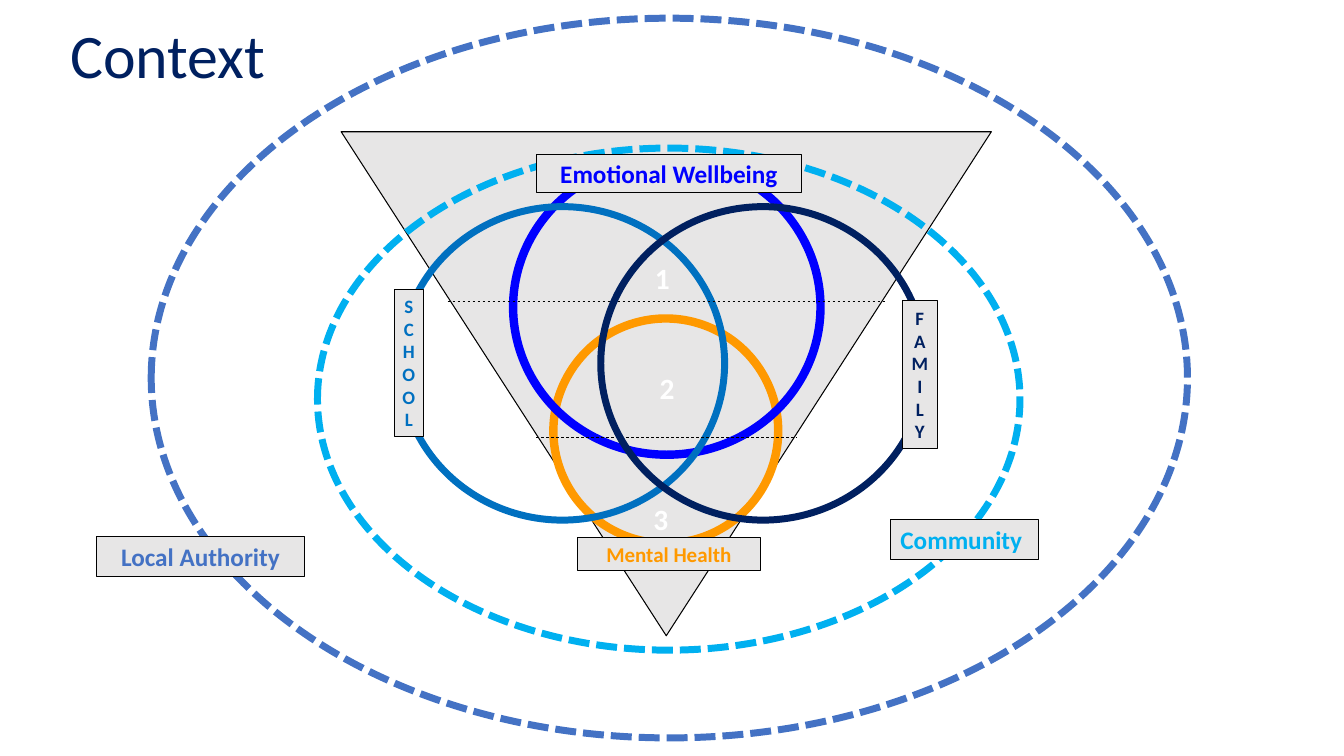
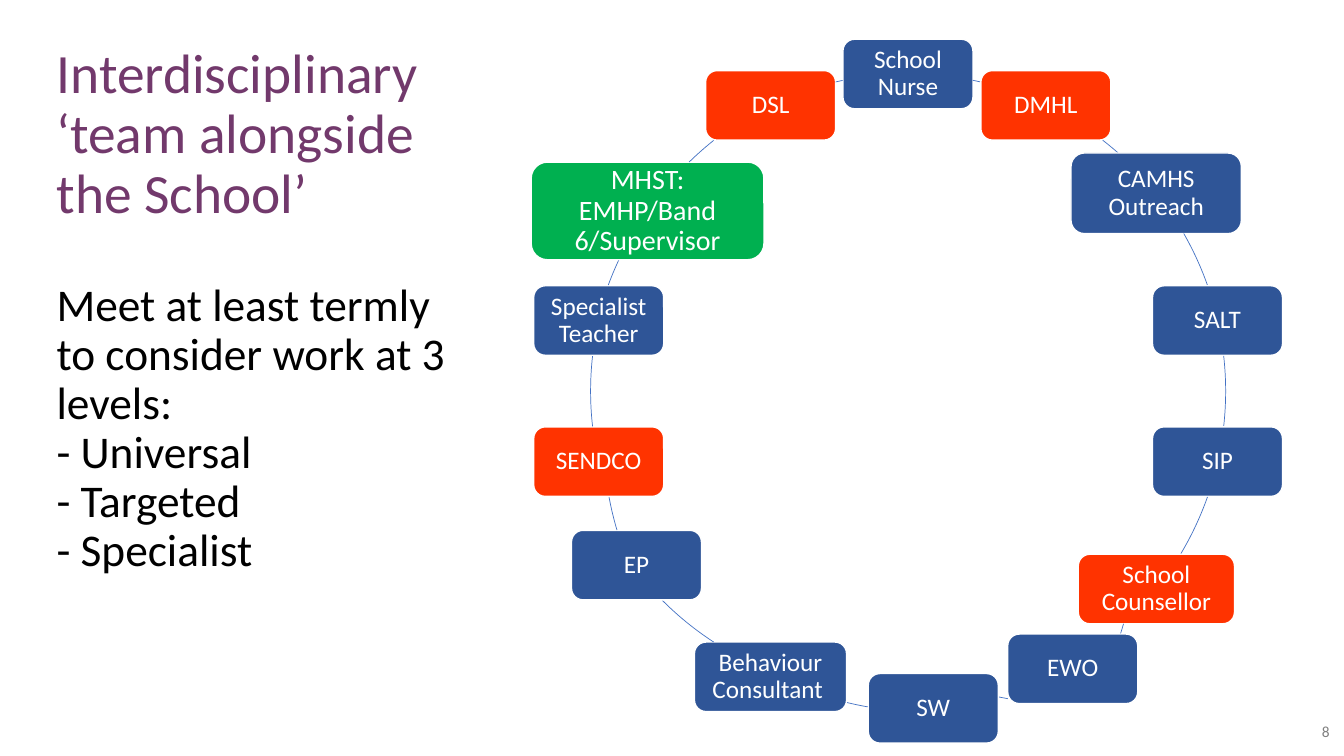
from dataclasses import dataclass
from math import atan2, degrees
from typing import Optional

from lxml.etree import SubElement
from pptx import Presentation
from pptx.dml.color import RGBColor
from pptx.enum.dml import MSO_LINE
from pptx.enum.shapes import MSO_CONNECTOR, MSO_SHAPE
from pptx.enum.text import MSO_ANCHOR, MSO_AUTO_SIZE, PP_ALIGN
from pptx.oxml.ns import qn
from pptx.util import Pt


@dataclass(frozen=True)
class Theme:
    """Colours, type sizes and font shared by the slides."""
    font: str = "Calibri"
    black: str = "000000"
    white: str = "FFFFFF"
    panel: str = "E7E6E6"
    navy: str = "002060"
    school: str = "0070C0"
    wellbeing: str = "0000FF"
    health: str = "FF9900"
    community: str = "00B0F0"
    accent: str = "4472C4"
    purple: str = "72396C"
    grey: str = "808080"
    partner: str = "2F5597"
    staff: str = "FF3300"
    support: str = "00B050"
    context_title: float = 44.2
    team_title: float = 39.6
    body: float = 32.4
    number: float = 21
    team: float = 20
    label: float = 18
    small_label: float = 15
    letter: float = 13.5
    footer: float = 11


THEME = Theme()
CIRCLE_SIZE = 453.6
DEGREE_ADJUSTMENT = 0.6


@dataclass(frozen=True)
class Frame:
    """Position and size in points."""
    left: float
    top: float
    width: float
    height: float

    def lengths(self) -> tuple:
        """Return the four lengths for a shape call."""
        return Pt(self.left), Pt(self.top), Pt(self.width), Pt(self.height)


@dataclass(frozen=True)
class TextStyle:
    """Look of a piece of text."""
    size: float
    color: str
    bold: bool = False
    align: PP_ALIGN = PP_ALIGN.CENTER
    anchor: MSO_ANCHOR = MSO_ANCHOR.MIDDLE
    spacing: float = 1.0
    side_inset: float = 7.2
    edge_inset: float = 3.6


@dataclass(frozen=True)
class Ring:
    """Outlined ellipse of the context diagram."""
    frame: Frame
    color: str
    weight: float = 5
    dash: Optional[MSO_LINE] = None


@dataclass(frozen=True)
class Label:
    """Grey box naming a ring."""
    text: str
    frame: Frame
    color: str
    size: float = THEME.label
    align: PP_ALIGN = PP_ALIGN.CENTER
    side_inset: float = 7.2


@dataclass(frozen=True)
class Member:
    """Team box and the arc that leads to the next one."""
    text: str
    left: float
    top: float
    arc_start: tuple
    arc_end: tuple
    fill: str = THEME.partner
    width: float = 92.9
    height: float = 49.7
    size: float = THEME.label
    circle: tuple = (421.9, 52.6)


INNER_RINGS = (
    Ring(Frame(395.3, 227.5, 160.6, 160.6), THEME.health, 6),
    Ring(Frame(366.5, 113.8, 219.6, 211), THEME.wellbeing, 6),
    Ring(Frame(285.8, 147.6, 231.8, 223.9), THEME.school),
)
OUTER_RINGS = (
    Ring(Frame(429.1, 147.6, 231.8, 223.9), THEME.navy),
    Ring(Frame(226.8, 105.8, 501.8, 358.6), THEME.community, dash=MSO_LINE.SQUARE_DOT),
    Ring(Frame(108, 13, 740.2, 514.1), THEME.accent, dash=MSO_LINE.SQUARE_DOT),
)
LEVEL_LINES = ((383, 568.8, 312.5), (319.7, 632.2, 215.3))
LABELS = (
    Label("\n".join("SCHOOL"), Frame(281.5, 206.6, 20.9, 105.1), THEME.school,
          THEME.letter, side_inset=0),
    Label("\n".join("FAMILY"), Frame(644.4, 214.9, 25.2, 105.5), THEME.navy,
          THEME.letter, side_inset=0),
    Label("Community", Frame(636.1, 371.1, 105.8, 28.8), THEME.community,
          align=PP_ALIGN.LEFT),
    Label("Emotional Wellbeing", Frame(383, 110.2, 189.6, 27.4), THEME.wellbeing),
    Label("Mental Health", Frame(412.4, 383.8, 130.8, 23.8), THEME.health,
          THEME.small_label),
    Label("Local Authority", Frame(69.1, 383, 148.3, 29), THEME.accent),
)
LEVEL_CENTRES = ((473, 198.7), (476.5, 277.2), (472.1, 370.4))
MEMBERS = (
    Member("School Nurse", 602.1, 28, (694.8, 57.6), (700.6, 58.3)),
    Member("DMHL", 700.6, 50.4, (787.7, 100.1), (798.5, 109.4), THEME.staff),
    Member("CAMHS Outreach", 765, 109.3, (845.3, 167), (862.6, 203.8),
           width=121.7, height=57.6),
    Member("SALT", 823.2, 204.1, (874.1, 254.2), (874.1, 304.6)),
    Member("SIP", 823.2, 304.9, (862.6, 355), (843.1, 395.3)),
    Member("School Counsellor", 770.2, 395.9, (802.8, 445.7), (800.6, 452.9),
           THEME.staff, 111.6, circle=(357.8, 156.2)),
    Member("EWO", 719.8, 452.9, (720, 499), (712.8, 497.5), circle=(532.8, 49)),
    Member("SW", 620.2, 481.1, (619.9, 504.7), (604.8, 501.8), circle=(432, 54.7)),
    Member("Behaviour Consultant ", 496, 458.6, (509.8, 458.6), (473, 429.1),
           width=108.7, circle=(406.8, 41.8)),
    Member("EP", 408.2, 378.8, (440.6, 378.7), (434.9, 355), circle=(431.3, 87.1)),
    Member("SENDCO", 381.2, 304.9, (423.4, 304.6), (423.4, 254.2), THEME.staff),
    Member("Specialist Teacher", 381.2, 204.1, (434.9, 203.8), (442.8, 185.8),
           circle=(420.5, 55.4)),
    Member("MHST: EMHP/Band 6/Supervisor", 379.4, 115.8, (492.5, 115.9), (509.8, 100.1),
           THEME.support, 166.3, 69.8, THEME.team, (424.1, 51.1)),
    Member("DSL", 504, 50.4, (596.9, 58.3), (601.9, 57.6), THEME.staff),
)


def rgb(color: str) -> RGBColor:
    """Turn a hex string into a colour."""
    return RGBColor.from_string(color)


def format_para(para, style: TextStyle) -> None:
    """Format a paragraph and its runs."""
    para.alignment = style.align
    para.line_spacing = style.spacing
    for span in para.runs:
        span.font.name = THEME.font
        span.font.size = Pt(style.size)
        span.font.bold = style.bold
        span.font.color.rgb = rgb(style.color)


def write_text(box, text: str, style: TextStyle) -> None:
    """Fill a shape with text, one paragraph per line."""
    text_frame = box.text_frame
    text_frame.text = text
    text_frame.word_wrap = True
    text_frame.auto_size = MSO_AUTO_SIZE.NONE
    text_frame.vertical_anchor = style.anchor
    text_frame.margin_left = text_frame.margin_right = Pt(style.side_inset)
    text_frame.margin_top = text_frame.margin_bottom = Pt(style.edge_inset)
    for para in text_frame.paragraphs:
        format_para(para, style)


def add_text(page, frame: Frame, text: str, style: TextStyle) -> None:
    """Add a text box."""
    write_text(page.shapes.add_textbox(*frame.lengths()), text, style)


def set_title(page, frame: Frame, text: str, style: TextStyle) -> None:
    """Move, fill and format the title placeholder."""
    title = page.shapes.title
    title.left, title.top, title.width, title.height = frame.lengths()
    write_text(title, text, style)


def add_outlined(page, kind: MSO_SHAPE, frame: Frame, fill: Optional[str],
                 line: str, weight: float):
    """Add a preset shape with an outline and an optional fill."""
    shape = page.shapes.add_shape(kind, *frame.lengths())
    shape.shadow.inherit = False
    if fill is None:
        shape.fill.background()
    else:
        shape.fill.solid()
        shape.fill.fore_color.rgb = rgb(fill)
    shape.line.color.rgb = rgb(line)
    shape.line.width = Pt(weight)
    return shape


def add_ring(page, ring: Ring) -> None:
    """Draw one ellipse of the diagram."""
    shape = add_outlined(page, MSO_SHAPE.OVAL, ring.frame, None, ring.color, ring.weight)
    if ring.dash is not None:
        shape.line.dash_style = ring.dash


def add_level_line(page, left: float, right: float, height: float) -> None:
    """Draw a dashed line between two levels."""
    line = page.shapes.add_connector(
        MSO_CONNECTOR.STRAIGHT, Pt(left), Pt(height), Pt(right), Pt(height))
    line.line.color.rgb = rgb(THEME.black)
    line.line.width = Pt(0.5)
    line.line.dash_style = MSO_LINE.DASH
    SubElement(line._element.spPr, qn("a:effectLst"))


def add_label(page, label: Label) -> None:
    """Draw a grey name box."""
    box = add_outlined(page, MSO_SHAPE.RECTANGLE, label.frame, THEME.panel,
                       THEME.black, 0.75)
    write_text(box, label.text, TextStyle(label.size, label.color, True, label.align,
                                          side_inset=label.side_inset))


def add_member(page, member: Member) -> None:
    """Draw a team box and its arc."""
    frame = Frame(member.left, member.top, member.width, member.height)
    box = add_outlined(page, MSO_SHAPE.ROUNDED_RECTANGLE, frame, member.fill,
                       THEME.white, 1)
    write_text(box, member.text, TextStyle(member.size, THEME.white, spacing=0.9,
                                           side_inset=7.6, edge_inset=0))
    left, top = member.circle
    arc = add_outlined(page, MSO_SHAPE.ARC, Frame(left, top, CIRCLE_SIZE, CIRCLE_SIZE),
                       None, THEME.accent, 0.5)
    for index, (x, y) in enumerate((member.arc_start, member.arc_end)):
        angle = degrees(atan2(y - top - CIRCLE_SIZE / 2, x - left - CIRCLE_SIZE / 2))
        arc.adjustments[index] = angle % 360 * DEGREE_ADJUSTMENT


def build_context(page) -> None:
    """Build the slide of nested contexts."""
    set_title(page, Frame(0, 8.5, 240, 65), "Context",
              TextStyle(THEME.context_title, THEME.navy, anchor=MSO_ANCHOR.TOP))
    triangle = add_outlined(page, MSO_SHAPE.ISOSCELES_TRIANGLE,
                            Frame(243.7, 94.1, 464.4, 360), THEME.panel, THEME.black, 0.75)
    triangle.rotation = 180
    for ring in INNER_RINGS:
        add_ring(page, ring)
    for level_line in LEVEL_LINES:
        add_level_line(page, *level_line)
    for ring in OUTER_RINGS:
        add_ring(page, ring)
    for label in LABELS:
        add_label(page, label)
    for level, (centre_x, centre_y) in enumerate(LEVEL_CENTRES, start=1):
        add_text(page, Frame(centre_x - 139.7, centre_y - 16.2, 279.4, 32.4), str(level),
                 TextStyle(THEME.number, THEME.white, True))


def build_team(page) -> None:
    """Build the slide of the team around the school."""
    heading = TextStyle(THEME.team_title, THEME.purple, align=PP_ALIGN.LEFT,
                        anchor=MSO_ANCHOR.TOP, spacing=0.9)
    body = TextStyle(THEME.body, THEME.black, align=PP_ALIGN.LEFT, spacing=0.9)
    lines = ("Interdisciplinary ‘team alongside the School’",
             "Meet at least termly to consider work at 3 levels:",
             "- Universal", "- Targeted", "- Specialist")
    set_title(page, Frame(33.2, 29, 303, 395), "\n".join(lines), heading)
    paragraphs = page.shapes.title.text_frame.paragraphs
    for para in paragraphs:
        para.space_before = Pt(0)
    for para in paragraphs[1:]:
        format_para(para, body)
    paragraphs[1].space_before = Pt(41)
    add_text(page, Frame(921.6, 508.3, 35.3, 28.8), "8",
             TextStyle(THEME.footer, THEME.grey, align=PP_ALIGN.RIGHT))
    for member in MEMBERS:
        add_member(page, member)


def main() -> None:
    """Build and save the deck."""
    deck = Presentation()
    deck.slide_width, deck.slide_height = Pt(960), Pt(540)
    for build in (build_context, build_team):
        build(deck.slides.add_slide(deck.slide_layouts[5]))
    deck.save("out.pptx")


if __name__ == "__main__":
    main()
